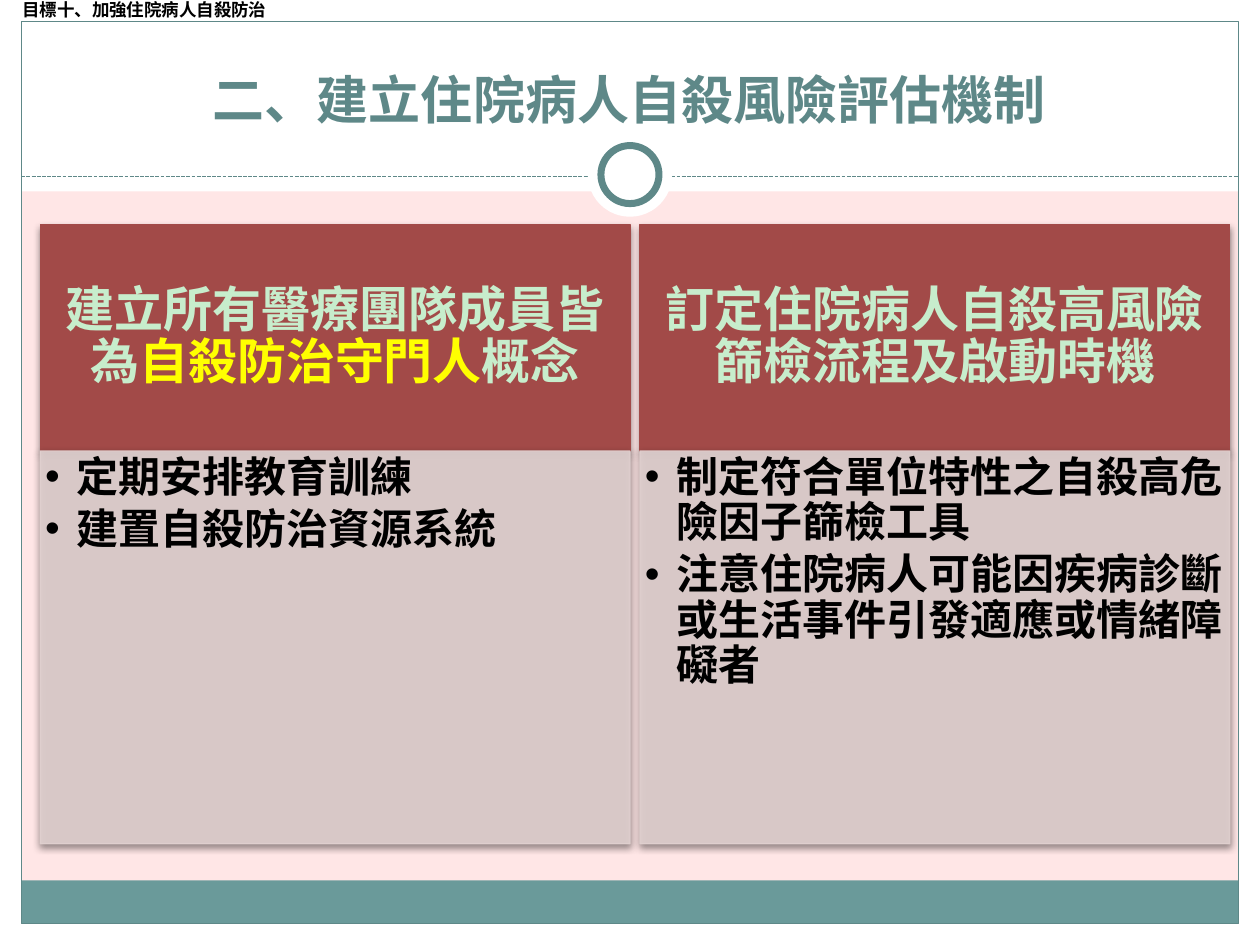
from lxml import etree
from pptx import Presentation
from pptx.dml.color import RGBColor
from pptx.enum.dml import MSO_LINE
from pptx.enum.shapes import MSO_CONNECTOR, MSO_SHAPE
from pptx.enum.text import MSO_ANCHOR, MSO_AUTO_SIZE, PP_ALIGN
from pptx.oxml import parse_xml
from pptx.oxml.ns import nsdecls, qn
from pptx.util import Cm, Pt

RECTANGLE, OVAL = MSO_SHAPE.RECTANGLE, MSO_SHAPE.OVAL
CENTER, LEFT = PP_ALIGN.CENTER, PP_ALIGN.LEFT
TOP, MIDDLE, BOTTOM = MSO_ANCHOR.TOP, MSO_ANCHOR.MIDDLE, MSO_ANCHOR.BOTTOM

# Content: a run is (text, colour name)
TAG = "目標十、加強住院病人自殺防治"
TITLE = "二、建立住院病人自殺風險評估機制"
PANELS = [
    {"heading": [("建立所有醫療團隊成員皆為", "mint"), ("自殺防治守門人", "yellow"), ("概念", "mint")],
     "points": ["定期安排教育訓練", "建置自殺防治資源系統"]},
    {"heading": [("訂定住院病人自殺高風險篩檢流程及啟動時機", "mint")],
     "points": ["制定符合單位特性之自殺高危險因子篩檢工具",
                "注意住院病人可能因疾病診斷或生活事件引發適應或情緒障礙者"]},
]

THEME = {
    "font": "Arial",
    "colours": {"pink": "FFE6E6", "white": "FFFFFF", "band": "6A9A9A", "teal": "5E8888",
                "red": "A24A48", "rose": "E0D0CF", "mint": "C7EDCC", "yellow": "FFFF00",
                "black": "000000"},
    "sizes": {"tag": 10, "title": 29.7, "heading": 28, "point": 24},
}

# Geometry in centimetres
WIDTH, HEIGHT, MARGIN = 25.4, 19.05, 0.43
TOP_BAND, RULE_Y, RING_Y = 3.86, 3.56, 3.52
FOOTER_HEIGHT = 0.87
PANEL_LEFT, PANEL_TOP, PANEL_WIDTH, PANEL_GAP = 0.81, 4.52, 11.89, 0.2
HEADING_HEIGHT, POINTS_HEIGHT = 4.57, 7.92
INSET, HANG = 0.1, 0.64


def colour(name):
    return RGBColor.from_string(THEME["colours"][name])


def set_all(target, values):
    for name, value in values.items():
        setattr(target, name, value)


def place(box, left, top, width, height):
    set_all(box, {"left": Cm(left), "top": Cm(top), "width": Cm(width), "height": Cm(height)})


def paint(box, fill=None, line=None, weight=0.75):
    if fill:
        box.fill.solid()
        box.fill.fore_color.rgb = colour(fill)
    else:
        box.fill.background()
    if line:
        box.line.color.rgb = colour(line)
        box.line.width = Pt(weight)
    else:
        box.line.fill.background()


def add_plain(page, kind, bounds, **look):
    box = page.shapes.add_shape(kind, *map(Cm, bounds))
    box.shadow.inherit = False
    paint(box, **look)


def add_circle(page, diameter, **look):
    corner = (WIDTH / 2 - diameter / 2, RING_Y - diameter / 2)
    add_plain(page, OVAL, (*corner, diameter, diameter), **look)


def write(frame, paragraphs, size, **para_format):
    """Fill a text frame with paragraphs, each a list of (text, colour) runs."""
    for number, runs in enumerate(paragraphs):
        para = frame.add_paragraph() if number else frame.paragraphs[0]
        set_all(para, {"space_before": Pt(0), **para_format})
        for text, name in runs:
            span = para.add_run()
            span.text = text
            set_all(span.font, {"name": THEME["font"], "size": Pt(THEME["sizes"][size]), "bold": True})
            span.font.color.rgb = colour(name)


def add_shadow(box):
    box._element.spPr.append(parse_xml(
        f'<a:effectLst {nsdecls("a")}><a:outerShdw blurRad="{Pt(4)}" dist="{Pt(2)}" dir="5400000" '
        'rotWithShape="0"><a:srgbClr val="000000"><a:alpha val="45000"/></a:srgbClr>'
        '</a:outerShdw></a:effectLst>'))


def set_opacity(box, percent):
    for tone in box._element.spPr.iter(qn("a:srgbClr")):
        etree.SubElement(tone, qn("a:alpha"), val=str(percent * 1000))


def set_bullet(para, hang):
    properties = para._p.get_or_add_pPr()
    properties.set("marL", str(Cm(hang)))
    properties.set("indent", str(-Cm(hang)))
    if hang:
        etree.SubElement(properties, qn("a:buFont"), typeface=THEME["font"])
        etree.SubElement(properties, qn("a:buChar"), char="•")
    else:
        etree.SubElement(properties, qn("a:buNone"))


def fill_panel_part(box, bounds, fill, anchor, paragraphs, size, hang, **para_format):
    place(box, *bounds)
    paint(box, fill=fill, line=fill)
    frame = box.text_frame
    margins = {f"margin_{side}": Cm(INSET) for side in ("left", "top", "right", "bottom")}
    set_all(frame, {"word_wrap": True, "auto_size": MSO_AUTO_SIZE.NONE,
                    "vertical_anchor": anchor, **margins})
    write(frame, paragraphs, size, line_spacing=0.9, **para_format)
    for para in frame.paragraphs:
        set_bullet(para, hang)


def add_frame(page):
    inner_width, inner_height = WIDTH - 2 * MARGIN, HEIGHT - 2 * MARGIN
    bottom = HEIGHT - MARGIN
    # White margins and heading band
    for bounds in [(0, bottom, WIDTH, MARGIN), (0, 0, WIDTH, TOP_BAND),
                   (0, 0, MARGIN, HEIGHT), (WIDTH - MARGIN, 0, MARGIN, HEIGHT)]:
        add_plain(page, RECTANGLE, bounds, fill="white")
    # Footer band and outline
    add_plain(page, RECTANGLE, (MARGIN, bottom - FOOTER_HEIGHT, inner_width, FOOTER_HEIGHT), fill="band")
    add_plain(page, RECTANGLE, (MARGIN, MARGIN, inner_width, inner_height), line="teal")
    # Dashed rule with ring
    rule = page.shapes.add_connector(MSO_CONNECTOR.STRAIGHT, Cm(MARGIN), Cm(RULE_Y),
                                     Cm(WIDTH - MARGIN), Cm(RULE_Y))
    set_all(rule.line, {"width": Pt(0.75), "dash_style": MSO_LINE.SQUARE_DOT})
    rule.line.color.rgb = colour("teal")
    etree.SubElement(rule._element.spPr, qn("a:effectLst"))
    add_circle(page, 1.7, fill="white")
    add_circle(page, 1.17, fill="white", line="teal", weight=4)
    # Section tag
    tag = page.shapes.add_textbox(Cm(0.2), Cm(-0.15), Cm(12.7), Cm(0.69))
    tag.text_frame.word_wrap = True
    write(tag.text_frame, [[(TAG, "black")]], "tag")


def main():
    deck = Presentation()
    set_all(deck, {"slide_width": Cm(WIDTH), "slide_height": Cm(HEIGHT)})
    page = deck.slides.add_slide(deck.slide_layouts.get_by_name("Comparison"))
    page.background.fill.solid()
    page.background.fill.fore_color.rgb = colour("pink")
    title, *parts = list(page.placeholders)
    add_frame(page)

    # Bring the placeholders in front of the frame
    for box in (title, *parts):
        page.shapes._spTree.append(box._element)

    # Title
    place(title, 0.84, 0.64, 23.7, 2.11)
    set_all(title.text_frame, {"word_wrap": True, "auto_size": MSO_AUTO_SIZE.NONE,
                               "vertical_anchor": BOTTOM})
    write(title.text_frame, [[(TITLE, "teal")]], "title", alignment=CENTER, line_spacing=1.76)

    # Two panels, each a heading over a list
    for column, panel in enumerate(PANELS):
        heading, points = parts[2 * column:2 * column + 2]
        left = PANEL_LEFT + column * (PANEL_WIDTH + PANEL_GAP)
        fill_panel_part(heading, (left, PANEL_TOP, PANEL_WIDTH, HEADING_HEIGHT), "red", MIDDLE,
                        [panel["heading"]], "heading", 0, alignment=CENTER)
        fill_panel_part(points, (left, PANEL_TOP + HEADING_HEIGHT, PANEL_WIDTH, POINTS_HEIGHT),
                        "rose", TOP, [[(text, "black")] for text in panel["points"]], "point",
                        HANG, alignment=LEFT, space_after=Pt(4))
        set_opacity(points, 90)
        for box in (heading, points):
            add_shadow(box)

    deck.save("out.pptx")


if __name__ == "__main__":
    main()
